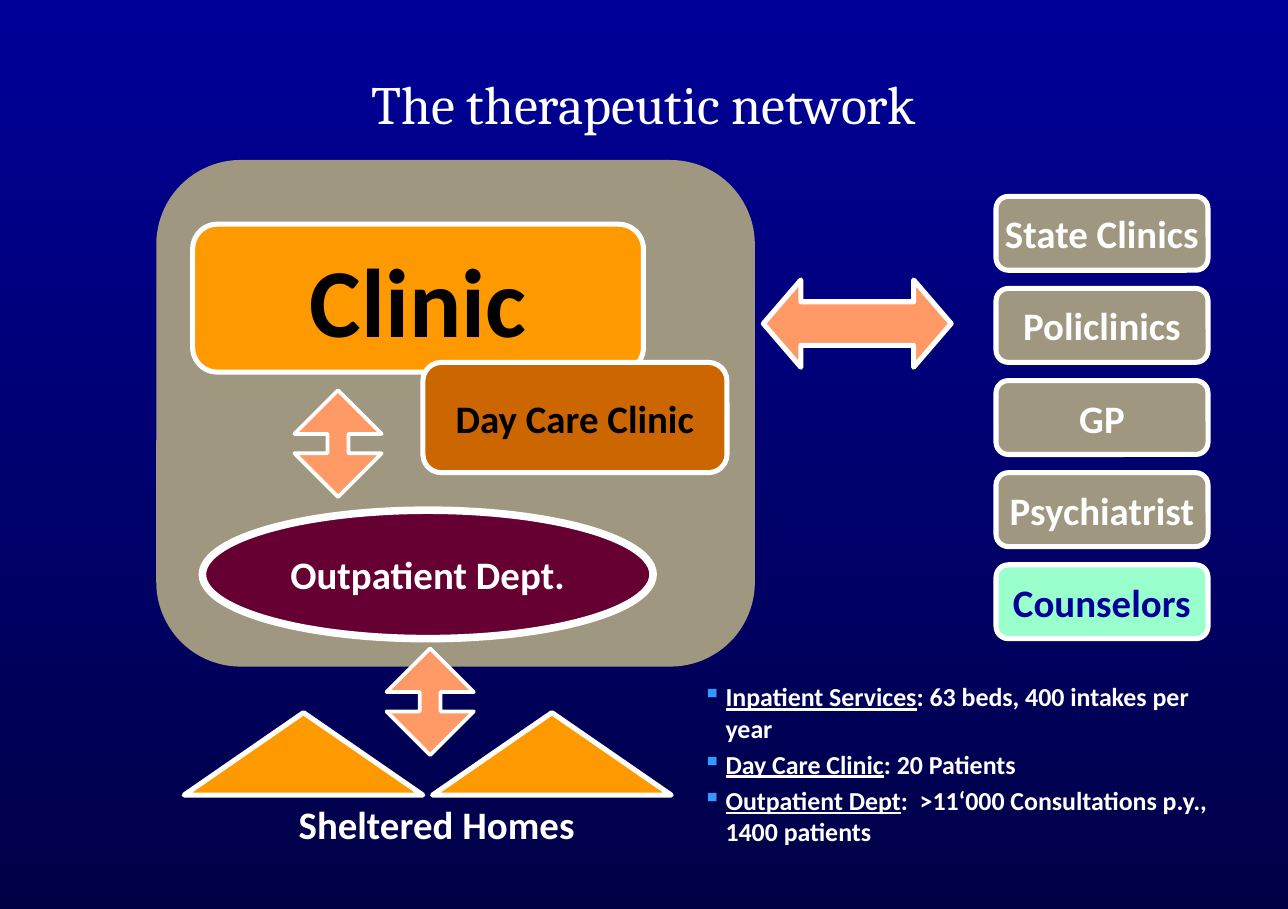
import pptx
import pptx.util
from lxml import etree
from pptx.dml.color import RGBColor
from pptx.enum.shapes import MSO_SHAPE
from pptx.enum.text import MSO_ANCHOR, PP_ALIGN
from pptx.oxml.ns import qn
from pptx.util import Inches

WHITE = RGBColor(0xFF, 0xFF, 0xFF)
BLACK = RGBColor(0, 0, 0)
BLUE = RGBColor(0, 0, 0x99)
NAVY = RGBColor(0, 0, 0x47)
TAUPE = RGBColor(0xA0, 0x97, 0x81)
ORANGE = RGBColor(0xFF, 0x99, 0x00)
BROWN = RGBColor(0xCC, 0x66, 0x00)
MAROON = RGBColor(0x66, 0x00, 0x33)
SALMON = RGBColor(0xFF, 0x99, 0x66)
MINT = RGBColor(0x99, 0xFF, 0xCC)
BULLET = RGBColor(0x33, 0x99, 0xFF)

LABEL_SIZE = 23.1
SERVICES = [
    ("Inpatient Services", ": 63 beds, 400 intakes per year"),
    ("Day Care Clinic", ": 20 Patients"),
    ("Outpatient Dept", ":  >11‘000 Consultations p.y., 1400 patients"),
]
PARTNERS = ["State Clinics", "Policlinics", "GP", "Psychiatrist", "Counselors"]


def format_run(r, size, color=WHITE, bold=True, name="Calibri"):
    r.font.name = name
    r.font.size = pptx.util.Pt(size)
    r.font.bold = bold
    r.font.color.rgb = color


def set_label(tf, text, size=LABEL_SIZE, color=WHITE, bold=True, name="Calibri"):
    tf.text = text
    p = tf.paragraphs[0]
    p.alignment = PP_ALIGN.CENTER
    format_run(p.runs[0], size, color, bold, name)


def add_block(s, kind, box, fill, line=3):
    sp = s.shapes.add_shape(kind, *map(Inches, box))
    sp.shadow.inherit = False
    sp.fill.solid()
    sp.fill.fore_color.rgb = fill
    if line:
        sp.line.color.rgb = WHITE
        sp.line.width = pptx.util.Pt(line)
    else:
        sp.line.fill.background()
    return sp


def add_unit(s, kind, box, fill, text, size=LABEL_SIZE, color=WHITE, line=3):
    tf = add_block(s, kind, box, fill, line).text_frame
    tf.word_wrap = False
    tf.vertical_anchor = MSO_ANCHOR.MIDDLE
    set_label(tf, text, size, color)


def add_arrow(s, kind, box, head, line=2.25):
    sp = add_block(s, kind, box, SALMON, line)
    sp.adjustments[0] = 0.5
    sp.adjustments[1] = head


def add_text_box(s, box):
    tf = s.shapes.add_textbox(*map(Inches, box)).text_frame
    tf.word_wrap = True
    return tf


def set_bullet(p):
    pPr = p._p.get_or_add_pPr()
    pPr.set("marL", str(Inches(0.19)))
    pPr.set("indent", str(-Inches(0.19)))
    color = etree.SubElement(pPr, qn("a:buClr"))
    etree.SubElement(color, qn("a:srgbClr")).set("val", str(BULLET))
    etree.SubElement(pPr, qn("a:buChar")).set("char", "▪")


def add_services(s, box):
    tf = add_text_box(s, box)
    for i, (service, details) in enumerate(SERVICES):
        p = tf.add_paragraph() if i else tf.paragraphs[0]
        set_bullet(p)
        if i:
            p.space_before = pptx.util.Pt(3)
        for text, underline in ((service, True), (details, False)):
            r = p.add_run()
            r.text = text
            format_run(r, 15.4)
            r.font.underline = underline


def set_background(s):
    fill = s.background.fill
    fill.gradient()
    fill.gradient_angle = 270
    for stop, color in zip(fill.gradient_stops, (BLUE, NAVY)):
        stop.color.rgb = color


def set_title(s, text):
    sp = s.shapes.title
    sp.left, sp.top, sp.width, sp.height = map(Inches, (0.53, 0.36, 9.57, 0.98))
    sp.text_frame.vertical_anchor = MSO_ANCHOR.MIDDLE
    set_label(sp.text_frame, text, 32, bold=False, name="Cambria")


def main():
    prs = pptx.Presentation()
    prs.slide_width, prs.slide_height = Inches(10.63), Inches(7.5)
    s = prs.slides.add_slide(prs.slide_layouts[5])
    set_background(s)
    set_title(s, "The therapeutic network")

    # Own departments
    rounded = MSO_SHAPE.ROUNDED_RECTANGLE
    add_block(s, rounded, (1.29, 1.32, 4.94, 4.18), TAUPE, line=0)
    add_unit(s, rounded, (1.59, 1.85, 3.72, 1.22), ORANGE, "Clinic", 57.9, BLACK)
    add_unit(s, rounded, (3.49, 2.99, 2.51, 0.91), BROWN, "Day Care Clinic",
             color=BLACK)
    add_unit(s, MSO_SHAPE.OVAL, (1.67, 4.21, 3.72, 1.06), MAROON,
             "Outpatient Dept.", line=4.5)

    # Sheltered homes
    for left in (1.52, 3.57):
        add_block(s, MSO_SHAPE.ISOSCELES_TRIANGLE, (left, 5.88, 1.97, 0.68), ORANGE)
    set_label(add_text_box(s, (2.13, 6.56, 2.95, 0.49)), "Sheltered Homes")

    # External partners
    for i, partner in enumerate(PARTNERS):
        is_last = i == len(PARTNERS) - 1
        add_unit(s, rounded, (8.22, 1.62 + 0.76 * i, 1.75, 0.61),
                 MINT if is_last else TAUPE, partner,
                 color=BLUE if is_last else WHITE)

    # Exchange arrows
    for left, top in ((2.43, 3.22), (3.19, 5.35)):
        add_arrow(s, MSO_SHAPE.UP_DOWN_ARROW, (left, top, 0.72, 0.88), 0.24)
    add_arrow(s, MSO_SHAPE.LEFT_RIGHT_ARROW, (6.3, 2.31, 1.55, 0.72), 0.43, line=3)

    # Service figures
    add_services(s, (5.7, 5.57, 4.44, 1.54))
    prs.save("out.pptx")


if __name__ == "__main__":
    main()
